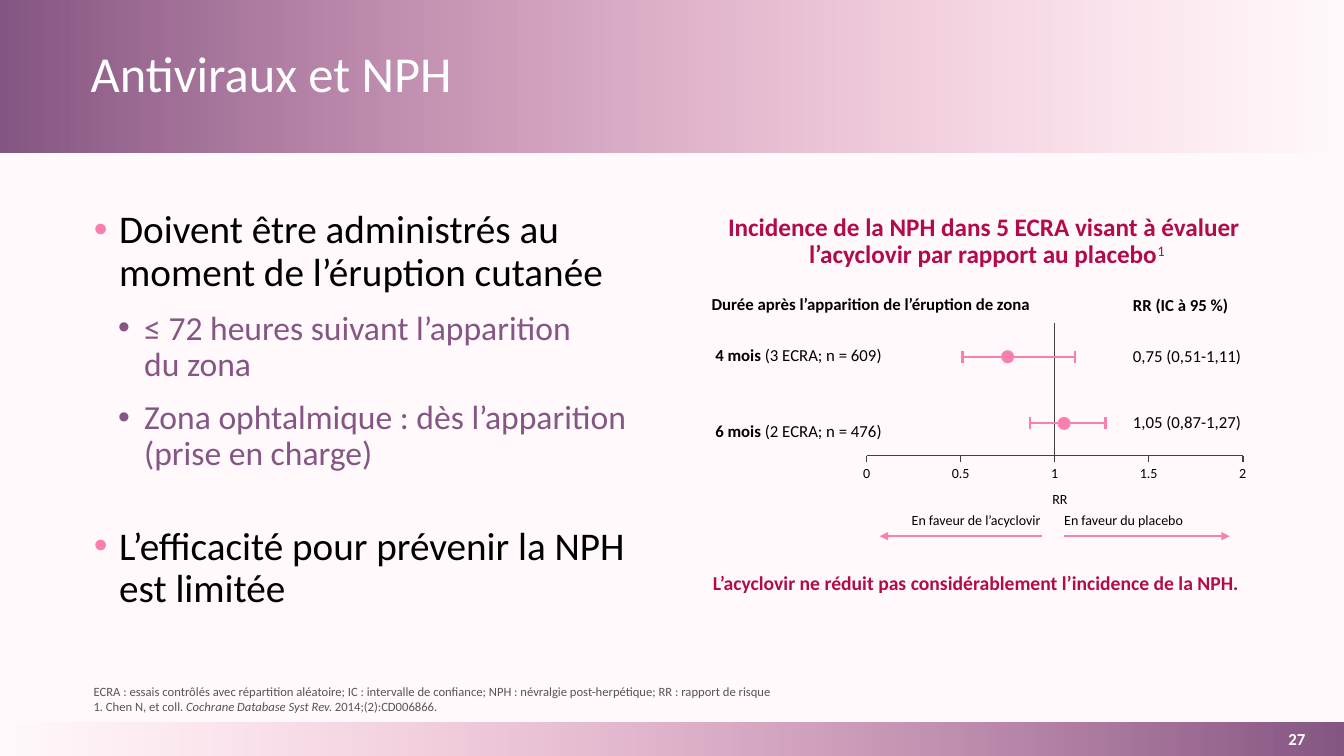
import pptx
import pptx.dml.color
import pptx.enum.shapes
import pptx.enum.text
import pptx.util
from lxml import etree
from pptx.oxml.ns import qn

Cm = pptx.util.Cm
Pt = pptx.util.Pt
RGBColor = pptx.dml.color.RGBColor
ALIGN = pptx.enum.text.PP_ALIGN
ANCHOR = pptx.enum.text.MSO_ANCHOR
SHAPE = pptx.enum.shapes.MSO_SHAPE

PURPLE = RGBColor(0x85, 0x56, 0x83)
PINK = RGBColor(0xF8, 0x7F, 0xAE)
CRIMSON = RGBColor(0xB2, 0x0A, 0x4B)
GREY = RGBColor(0x55, 0x55, 0x55)
AXIS = RGBColor(0x40, 0x40, 0x40)
BLACK = RGBColor(0, 0, 0)
WHITE = RGBColor(0xFF, 0xFF, 0xFF)
PALE = RGBColor(0xFF, 0xF9, 0xFB)

WIDTH, HEIGHT = 33.87, 19.05


def apply(target, formats):
    for name, value in formats.items():
        setattr(target, name, value)


class SlideBuilder:
    """Draws elements on one slide; all lengths are in centimetres."""

    font_name = "Calibri"

    def __init__(self, slide):
        self.slide = slide
        slide.background.fill.solid()
        slide.background.fill.fore_color.rgb = PALE

    def place(self, shape, box):
        apply(shape, dict(zip(("left", "top", "width", "height"), map(Cm, box))))

    def band(self, top, height, angle):
        """Full-width gradient band, placed behind everything else."""
        shape = self.slide.shapes.add_shape(
            SHAPE.RECTANGLE, Cm(0), Cm(top), Cm(WIDTH), Cm(height))
        shape.shadow.inherit = False
        shape.line.fill.background()
        shape.fill.gradient()
        shape.fill.gradient_angle = angle
        for stop, color in zip(shape.fill.gradient_stops, (PURPLE, PINK)):
            stop.color.rgb = color
        last_color = list(shape.fill._fill._gradFill.iter(qn("a:srgbClr")))[-1]
        etree.SubElement(last_color, qn("a:alpha")).set("val", "0")
        tree = self.slide.shapes._spTree
        tree.remove(shape._element)
        tree.insert(2, shape._element)

    def frame(self, shape, anchor=ANCHOR.TOP, wrap=True, inset=None):
        frame = shape.text_frame
        apply(frame, {"word_wrap": wrap, "vertical_anchor": anchor,
                      "auto_size": pptx.enum.text.MSO_AUTO_SIZE.NONE})
        if inset is not None:
            sides = ("left", "top", "right", "bottom")
            apply(frame, {f"margin_{side}": Cm(inset) for side in sides})
        return frame

    def paragraph(self, frame, runs, size, color, first=True,
                  align=ALIGN.LEFT, spacing=0.9, after=0):
        """Write runs given as (text, font formats); a newline breaks the line."""
        paragraph = frame.paragraphs[0] if first else frame.add_paragraph()
        apply(paragraph, {"alignment": align, "line_spacing": spacing,
                          "space_before": Pt(0), "space_after": Pt(after)})
        for text, formats in runs:
            for number, line in enumerate(text.split("\n")):
                if number:
                    paragraph.add_line_break()
                run = paragraph.add_run()
                run.text = line
                apply(run.font, {"name": self.font_name, "size": Pt(size), **formats})
                run.font.color.rgb = color
        return paragraph

    def title(self, text, box):
        shape = self.slide.shapes.title
        self.place(shape, box)
        self.paragraph(self.frame(shape, ANCHOR.MIDDLE), [(text, {})], 36, WHITE)

    def bullets(self, items, box):
        shape = self.slide.placeholders[1]
        self.place(shape, box)
        frame = self.frame(shape)
        styles = ((28, BLACK, PINK, 0.64, 0.64), (24, PURPLE, PURPLE, 1.27, 0.66))
        for number, (level, text, after) in enumerate(items):
            size, color, bullet_color, margin, hanging = styles[level]
            paragraph = self.paragraph(frame, [(text, {})], size, color,
                                       first=number == 0, after=after)
            paragraph.level = level
            properties = paragraph._p.get_or_add_pPr()
            properties.set("marL", str(Cm(margin)))
            properties.set("indent", str(-Cm(hanging)))
            color_choice = etree.SubElement(properties, qn("a:buClr"))
            etree.SubElement(color_choice, qn("a:srgbClr")).set("val", str(bullet_color))
            etree.SubElement(properties, qn("a:buFont")).set("typeface", "Arial")
            etree.SubElement(properties, qn("a:buChar")).set("char", "•")

    def textbox(self, box, anchor=ANCHOR.TOP, wrap=True, inset=None):
        shape = self.slide.shapes.add_textbox(*map(Cm, box))
        return self.frame(shape, anchor, wrap, inset)

    def label(self, runs, box, size=12, color=BLACK, align=ALIGN.LEFT):
        frame = self.textbox(box, wrap=False, inset=0)
        return self.paragraph(frame, runs, size, color, align=align)

    def line(self, start, end, color, width, arrow=False):
        connector = self.slide.shapes.add_connector(
            pptx.enum.shapes.MSO_CONNECTOR.STRAIGHT, *map(Cm, (*start, *end)))
        connector.line.color.rgb = color
        connector.line.width = Pt(width)
        if arrow:
            tail = etree.SubElement(connector.line._get_or_add_ln(), qn("a:tailEnd"))
            tail.set("type", "triangle")
        etree.SubElement(connector._element.spPr, qn("a:effectLst"))

    def dot(self, x, y, size):
        shape = self.slide.shapes.add_shape(
            SHAPE.OVAL, *map(Cm, (x - size / 2, y - size / 2, size, size)))
        shape.shadow.inherit = False
        shape.fill.solid()
        shape.fill.fore_color.rgb = PINK
        shape.line.fill.background()


def forest_plot(builder):
    bold, plain = {"bold": True}, {"bold": False}
    axis_y, axis_x, unit = 11.48, 21.84, 4.74
    value_x = 28.55

    def x_of(risk):
        return axis_x + unit * risk

    # Column headings
    builder.label([("Durée après l’apparition de l’éruption de zona", bold)],
                  (17.86, 7.47, 8.18, 0.46), align=ALIGN.CENTER)
    builder.label([("RR (IC à 95 %)", bold)], (value_x, 7.49, 2.44, 0.46))

    # Axis, ticks and reference line
    builder.line((axis_x, axis_y), (x_of(2), axis_y), AXIS, 1)
    for tick in ("0", "0.5", "1", "1.5", "2"):
        x = x_of(float(tick))
        builder.line((x, axis_y), (x, axis_y + 0.15), AXIS, 1)
        builder.label([(tick, {})], (x - 0.5, 11.76, 1, 0.38), 10, align=ALIGN.CENTER)
    builder.line((x_of(1), 8.15), (x_of(1), axis_y), AXIS, 1)
    builder.label([("RR", {})], (26.52, 12.4, 0.38, 0.38), 10, align=ALIGN.CENTER)

    # Estimates with confidence intervals
    rows = (("4 mois ", "(3 ECRA; n = 609)", 8.74, 8.99, 8.76, 0.75, 0.51, 1.11),
            ("6 mois ", "(2 ECRA; n = 476)", 10.67, 10.67, 10.44, 1.05, 0.87, 1.27))
    for period, trials, label_y, y, value_y, risk, low, high in rows:
        builder.label([(period, bold), (trials, plain)],
                      (17.98, label_y, 4.29, 0.46), align=ALIGN.CENTER)
        builder.line((x_of(low), y), (x_of(high), y), PINK, 1.5)
        for limit in (low, high):
            builder.line((x_of(limit), y - 0.15), (x_of(limit), y + 0.15), PINK, 1.5)
        builder.dot(x_of(risk), y, 0.33)
        value = f"{risk:.2f} ({low:.2f}-{high:.2f})".replace(".", ",")
        builder.label([(value, {})], (value_x, value_y, 2.77, 0.46))

    # Direction of benefit
    sides = (("En faveur de l’acyclovir", 22.89, 3.33, ALIGN.RIGHT, 26.26, 22.17),
             ("En faveur du placebo", 26.82, 3.05, ALIGN.LEFT, 26.82, 30.99))
    for text, left, width, align, start, end in sides:
        builder.label([(text, {})], (left, 12.95, width, 0.38), 10, align=align)
        builder.line((start, 13.51), (end, 13.51), PINK, 1.5, arrow=True)


def main():
    presentation = pptx.Presentation()
    apply(presentation, {"slide_width": Cm(WIDTH), "slide_height": Cm(HEIGHT)})
    builder = SlideBuilder(presentation.slides.add_slide(presentation.slide_layouts[1]))

    # Bands, title and list
    builder.band(0, 3.84, 0)
    builder.band(18.21, 0.84, 180)
    builder.title("Antiviraux et NPH", (2.03, 0.46, 29.13, 2.9))
    builder.bullets((
        (0, "Doivent être administrés au moment de l’éruption cutanée", 12),
        (1, "≤ 72 heures suivant l’apparition \ndu zona", 12),
        (1, "Zona ophtalmique : dès l’apparition (prise en charge)", 38),
        (0, "L’efficacité\u00a0pour prévenir la NPH est limitée", 0),
    ), (2.11, 5.16, 15.27, 10.26))

    # Chart heading, plot and conclusion
    heading = builder.label(
        [("Incidence de la NPH dans 5 ECRA visant à évaluer \n"
          "l’acyclovir par rapport au placebo", {"bold": True}), ("1", {"bold": False})],
        (18.29, 5.41, 13.16, 1.4), 18, CRIMSON, ALIGN.CENTER)
    heading.runs[-1]._r.get_or_add_rPr().set("baseline", "30000")
    forest_plot(builder)
    builder.label([("L’acyclovir ne réduit pas considérablement l’incidence de la NPH.",
                    {"bold": True})], (17.96, 14.45, 13.28, 0.53), 14, CRIMSON, ALIGN.CENTER)

    # Footnotes and slide number
    notes = builder.textbox((2.11, 16.43, 29.64, 1.7), ANCHOR.BOTTOM)
    builder.paragraph(notes, [(
        "ECRA : essais contrôlés avec répartition aléatoire; IC : intervalle de confiance; "
        "NPH : névralgie post-herpétique; RR : rapport de risque", {})], 9, GREY, spacing=1)
    builder.paragraph(notes, [
        ("1. Chen N, et coll. ", {}), ("Cochrane Database Syst Rev. ", {"italic": True}),
        ("2014;(2):CD006866.", {})], 9, GREY, first=False, spacing=1)
    number = builder.textbox((31.5, 18.21, 2.37, 0.84), ANCHOR.MIDDLE, inset=0)
    builder.paragraph(number, [("27", {"bold": True})], 12, WHITE,
                      align=ALIGN.CENTER, spacing=1)

    presentation.save("out.pptx")


if __name__ == "__main__":
    main()
